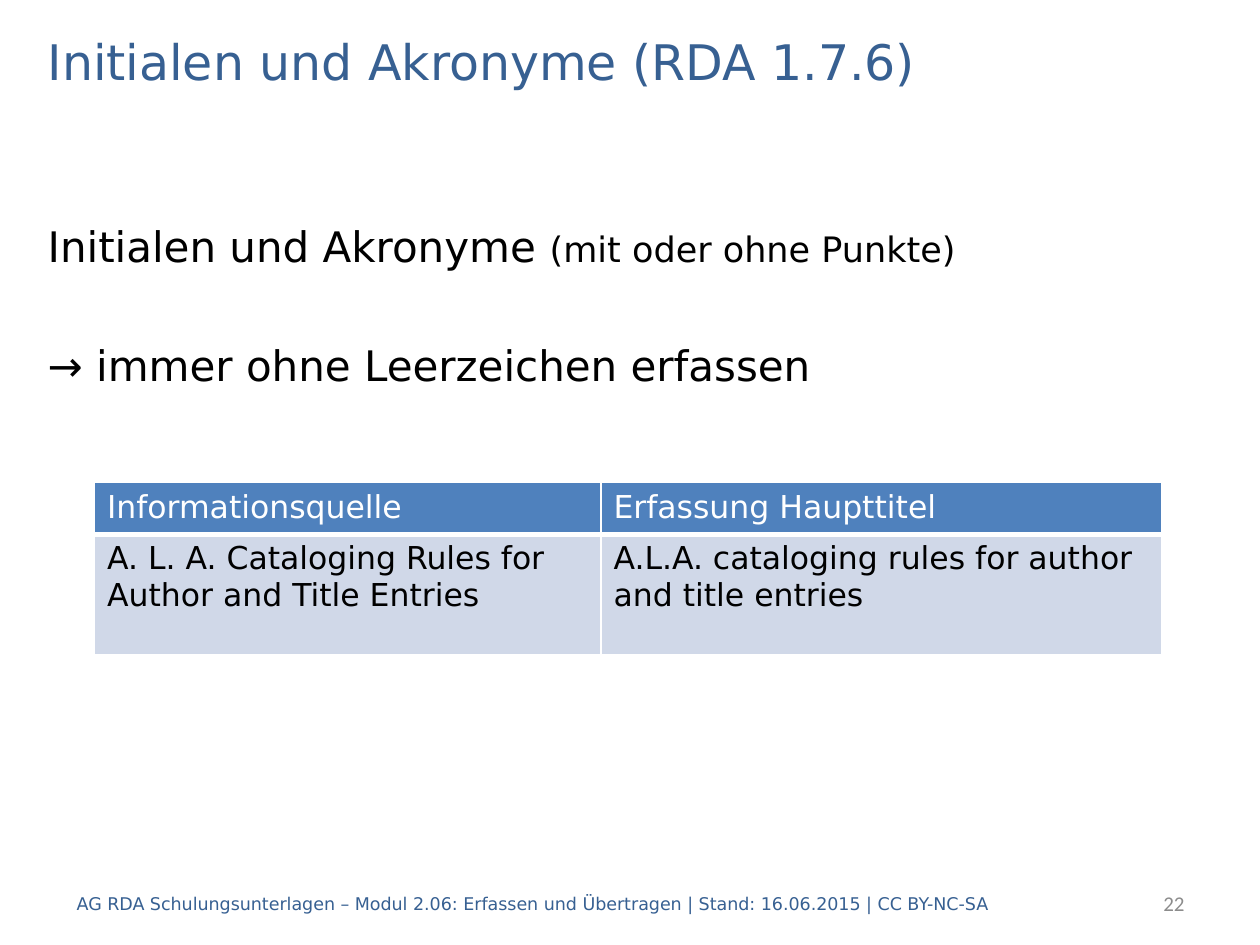
from lxml.etree import SubElement
from pptx import Presentation
from pptx.dml.color import RGBColor
from pptx.enum.text import MSO_ANCHOR, PP_ALIGN
from pptx.oxml.ns import qn
from pptx.util import Inches, Pt

SANS, NUMBER_FONT = "DejaVu Sans", "Calibri"
BLUE, GRAY, BLACK, WHITE = "376092", "8C8C8C", "000000", "FFFFFF"

TITLE = [("Initialen und Akronyme (RDA 1.7.6)", 28)]
RULE = [("Initialen und Akronyme ", 24), ("(mit oder ohne Punkte)", 20)]
CONSEQUENCE = [("→ immer ohne Leerzeichen erfassen", 24)]
FOOTER = [("AG RDA Schulungsunterlagen – Modul 2.06: Erfassen und Übertragen"
           " | Stand: 16.06.2015 | CC BY-NC-SA", 10)]
PAGE = [("22", 12)]
EXAMPLES = [
    ("Informationsquelle", "Erfassung Haupttitel"),
    ("A. L. A. Cataloging Rules for Author and Title Entries",
     "A.L.A. cataloging rules for author and title entries"),
]
ROW_STYLES = [("4F81BD", WHITE, {"T": 1, "B": 3}), ("D0D8E8", BLACK, {"T": 3, "B": 1})]
COLUMN_WIDTHS = [4.02, 4.45]
ROW_HEIGHTS = [0.41, 0.96]


def color(hex_value):
    """Return the RGB colour for a hex string."""
    return RGBColor.from_string(hex_value)


def add_runs(paragraph, runs, ink, font=SANS):
    """Write (text, size) runs into a paragraph."""
    for text, size in runs:
        run = paragraph.add_run()
        run.text = text
        run.font.size = Pt(size)
        run.font.name = font
        run.font.color.rgb = color(ink)


def add_text(slide, box, paragraphs, ink, font=SANS, anchor=MSO_ANCHOR.MIDDLE,
             align=PP_ALIGN.LEFT, gap=0):
    """Add a wrapped text box with a gap between its paragraphs."""
    frame = slide.shapes.add_textbox(*map(Inches, box)).text_frame
    frame.word_wrap = True
    frame.vertical_anchor = anchor
    for index, runs in enumerate(paragraphs):
        paragraph = frame.add_paragraph() if index else frame.paragraphs[0]
        paragraph.alignment = align
        paragraph.space_before = Pt(gap if index else 0)
        add_runs(paragraph, runs, ink, font)


def add_borders(cell, widths):
    """Draw white cell borders with the given widths by side."""
    properties = cell._tc.get_or_add_tcPr()
    for position, side in enumerate("LRTB"):
        line = SubElement(properties, qn(f"a:ln{side}"), w=str(Pt(widths.get(side, 1))))
        fill = SubElement(line, qn("a:solidFill"))
        SubElement(fill, qn("a:srgbClr"), val=WHITE)
        properties.insert(position, line)


def add_examples(slide, left, top):
    """Add the table comparing source and recorded title."""
    size = sum(COLUMN_WIDTHS), sum(ROW_HEIGHTS)
    table = slide.shapes.add_table(
        len(EXAMPLES), len(COLUMN_WIDTHS), *map(Inches, (left, top, *size))).table
    table.horz_banding = False
    for column, width in zip(table.columns, COLUMN_WIDTHS):
        column.width = Inches(width)
    for row, height, texts, (fill, ink, borders) in zip(
            table.rows, ROW_HEIGHTS, EXAMPLES, ROW_STYLES):
        row.height = Inches(height)
        for cell, text in zip(row.cells, texts):
            cell.fill.solid()
            cell.fill.fore_color.rgb = color(fill)
            add_borders(cell, borders)
            paragraph = cell.text_frame.paragraphs[0]
            add_runs(paragraph, [(text, 18)], ink)
            paragraph.runs[0].font.bold = False


def main():
    """Build and save the slide."""
    deck = Presentation()
    deck.slide_width, deck.slide_height = Inches(10), Inches(7.5)
    slide = deck.slides.add_slide(deck.slide_layouts[6])
    add_text(slide, (0.28, 1.7, 9.45, 5.2), [RULE, CONSEQUENCE], BLACK,
             anchor=MSO_ANCHOR.TOP, gap=39.5)
    add_text(slide, (7.91, 6.97, 1.59, 0.4), [PAGE], GRAY, NUMBER_FONT,
             align=PP_ALIGN.RIGHT)
    add_text(slide, (0.28, 0.2, 9.45, 0.56), [TITLE], BLUE)
    add_text(slide, (0.51, 6.97, 8.35, 0.4), [FOOTER], BLUE)
    add_examples(slide, 0.75, 3.83)
    deck.save("out.pptx")


if __name__ == "__main__":
    main()
